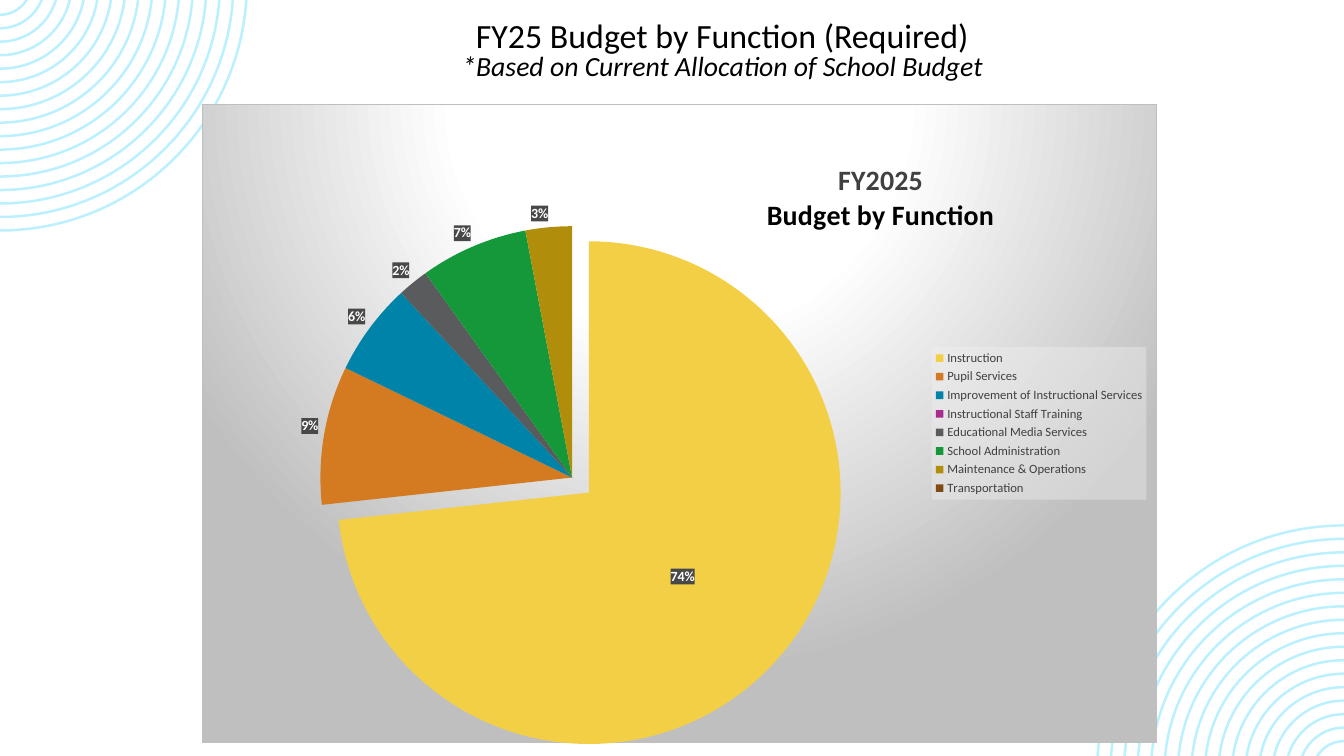
from copy import deepcopy
from math import asin, cos, pi, sin, tan

from pptx import Presentation
from pptx.chart.data import CategoryChartData
from pptx.dml.color import RGBColor
from pptx.enum.chart import XL_CHART_TYPE, XL_LABEL_POSITION, XL_LEGEND_POSITION
from pptx.enum.text import MSO_ANCHOR, PP_ALIGN
from pptx.oxml import parse_xml
from pptx.oxml.ns import nsdecls
from pptx.util import Pt

PX = 914400 / 100.8
WIDE, HIGH = 1344, 756
FONT = "Calibri"
COLORS = {
    "ring": "BBF0FF", "black": "000000", "white": "FFFFFF",
    "gray": "404040", "edge": "BFBFBF", "label": "484848", "legend": "F2F2F2",
}
BUDGET = [
    ("Instruction", 74, "F3CF45"),
    ("Pupil Services", 9, "D47B22"),
    ("Improvement of Instructional Services", 6, "0083A9"),
    ("Instructional Staff Training", 0, "A92A91"),
    ("Educational Media Services", 2, "595B5D"),
    ("School Administration", 7, "159839"),
    ("Maintenance & Operations", 3, "B08E0B"),
    ("Transportation", 0, "7F4A14"),
]


def emu(px):
    return round(px * PX)


def style(font, size, color, bold=False, italic=False):
    font.name, font.size = FONT, Pt(size)
    font.bold, font.italic = bold, italic
    font.color.rgb = RGBColor.from_string(color)


def node(tag, body):
    return parse_xml(f'<c:{tag} {nsdecls("c", "a")}>{body}</c:{tag}>')


def solid(color, alpha=100):
    return node("spPr", f'<a:solidFill><a:srgbClr val="{color}">'
                        f'<a:alpha val="{alpha * 1000}"/></a:srgbClr></a:solidFill>')


def place(part, index, box, frame, sized=True, inner=False):
    """Give a chart part a manual layout; box and frame are in slide px."""
    for old in part.xpath("c:layout"):
        part.remove(old)
    x, y, w, h = box
    left, top, wide, high = frame
    body = '<c:layoutTarget val="inner"/>' if inner else ""
    body += '<c:xMode val="edge"/><c:yMode val="edge"/>'
    body += f'<c:x val="{(x - left) / wide:.4f}"/><c:y val="{(y - top) / high:.4f}"/>'
    if sized:
        body += f'<c:w val="{w / wide:.4f}"/><c:h val="{h / high:.4f}"/>'
    part.insert(index, node("layout", f"<c:manualLayout>{body}</c:manualLayout>"))


def bend(shape):
    """Turn the lines of each four-sided band into curve, line, curve."""
    lines = shape._element.xpath(".//a:lnTo")
    for i in range(0, len(lines), 7):
        for group in (lines[i:i + 3], lines[i + 4:i + 7]):
            curve = parse_xml(f'<a:cubicBezTo {nsdecls("a")}/>')
            group[0].addprevious(curve)
            for line in group:
                curve.append(line[0])
                line.getparent().remove(line)


def add_rings(slide, corner, turn):
    """Fan rings out of a slide corner; turn is 1 (down right) or -1 (up left)."""
    rise, gap, line, count = 16.4, 13.48, 2.5, 17

    def arc(radius):
        start = asin(rise / radius)
        pull = radius * 4 / 3 * tan((pi / 2 - start) / 4)
        x, y = radius * cos(start), radius * sin(start)
        spots = [(x, y), (x - pull * sin(start), y + pull * cos(start)),
                 (pull, radius), (0, radius)]
        return [(emu(corner[0] + turn * x), emu(corner[1] + turn * (y - rise)))
                for x, y in spots]

    path = None
    for i in range(count):
        outer = 32.5 + gap * i
        band = arc(outer) + arc(outer - line)[::-1]
        if path is None:
            path = slide.shapes.build_freeform(*band[0], scale=1.0)
        else:
            path.move_to(*band[0])
        path.add_line_segments(band[1:-1] + band[-1:], close=False)
    rings = path.convert_to_shape()
    bend(rings)
    rings.shadow.inherit = False
    rings.fill.solid()
    rings.fill.fore_color.rgb = RGBColor.from_string(COLORS["ring"])
    rings.line.fill.background()


def add_title(slide, box):
    frame = slide.shapes.add_textbox(*map(emu, box)).text_frame
    frame.word_wrap = True
    frame.vertical_anchor = MSO_ANCHOR.MIDDLE
    lines = [("FY25 Budget by Function (Required)", 24.2, False),
             ("*Based on Current Allocation of School Budget", 19.8, True)]
    frame.text = "\n".join(text for text, _, _ in lines)
    for para, (_, size, slant) in zip(frame.paragraphs, lines):
        para.alignment, para.line_spacing = PP_ALIGN.CENTER, 0.8
        style(para.font, size, COLORS["black"], italic=slant)


def paint_back(chart):
    stops = "".join(
        f'<a:gs pos="{pos * 1000}"><a:srgbClr val="{COLORS[name]}"/></a:gs>'
        for pos, name in [(0, "white"), (39, "white"), (100, "edge")])
    back = node("spPr", f'<a:gradFill><a:gsLst>{stops}</a:gsLst><a:path path="circle">'
                        '<a:fillToRect l="50000" t="-80000" r="50000" b="180000"/>'
                        '</a:path></a:gradFill><a:ln w="9525"><a:solidFill>'
                        f'<a:srgbClr val="{COLORS["edge"]}"/></a:solidFill></a:ln>')
    chart.element.xpath("c:chart")[0].addnext(back)


def add_labels(series):
    labels = series.data_labels
    labels.show_value = True
    labels.number_format, labels.number_format_is_linked = '0"%"', False
    labels.position = XL_LABEL_POSITION.OUTSIDE_END
    style(labels.font, 10, COLORS["white"], bold=True)
    group = series._element.xpath("c:dLbls")[0]
    group.xpath("c:numFmt")[0].addnext(solid(COLORS["label"]))
    looks = group.xpath("c:numFmt | c:spPr | c:txPr")

    series.points[0].data_label.position = XL_LABEL_POSITION.CENTER
    first = group.xpath("c:dLbl")[0]
    for old in first.xpath("c:spPr | c:txPr"):
        first.remove(old)
    for i, look in enumerate(looks, 1):
        first.insert(i, deepcopy(look))
    empty = [i for i, (_, value, _) in enumerate(BUDGET) if value == 0]
    for spot, i in enumerate(empty, 1):
        group.insert(spot, node("dLbl", f'<c:idx val="{i}"/><c:delete val="1"/>'))


def add_pie(slide, box):
    left, top, _, _ = box
    data = CategoryChartData()
    data.categories = [name for name, _, _ in BUDGET]
    data.add_series("Series 1", [value for _, value, _ in BUDGET])
    chart = slide.shapes.add_chart(XL_CHART_TYPE.PIE, *map(emu, box), data).chart
    style(chart.font, 10, COLORS["black"])
    paint_back(chart)

    chart.has_title = True
    frame = chart.chart_title.text_frame
    frame.text = "FY2025\nBudget by Function"
    for para, color in zip(frame.paragraphs, ["gray", "black"]):
        para.alignment = PP_ALIGN.CENTER
        style(para.font, 20, COLORS[color], bold=True)
    head = chart.element.xpath("c:chart/c:title")[0]
    place(head, 1, (left + 562, top + 54, 0, 0), box, sized=False)

    chart.has_legend = True
    chart.legend.position = XL_LEGEND_POSITION.RIGHT
    chart.legend.include_in_layout = False
    style(chart.legend.font, 9, COLORS["gray"])
    key = chart.element.xpath("c:chart/c:legend")[0]
    place(key, 1, (left + 730, top + 243, 215, 153), box)
    key.xpath("c:txPr")[0].addprevious(solid(COLORS["legend"], 39))

    plot = chart.plots[0]
    plot.vary_by_categories = True
    series = plot.series[0]
    for i, (_, _, color) in enumerate(BUDGET):
        fill = series.points[i].format.fill
        fill.solid()
        fill.fore_color.rgb = RGBColor.from_string(color)
    slice_look = series._element.xpath("c:dPt[1]/c:spPr")[0]
    slice_look.addprevious(parse_xml(f'<c:explosion {nsdecls("c")} val="9"/>'))
    add_labels(series)
    area = chart.element.xpath("c:chart/c:plotArea")[0]
    place(area, 0, (left + 118, top + 122, 504, 504), box, inner=True)


def main():
    deck = Presentation()
    deck.slide_width, deck.slide_height = emu(WIDE), emu(HIGH)
    slide = deck.slides.add_slide(deck.slide_layouts[6])
    add_rings(slide, (0, 0), 1)
    add_rings(slide, (WIDE, HIGH), -1)
    add_title(slide, (269, 12, 907, 80))
    add_pie(slide, (202, 104, 955, 640))
    deck.save("out.pptx")


if __name__ == "__main__":
    main()
